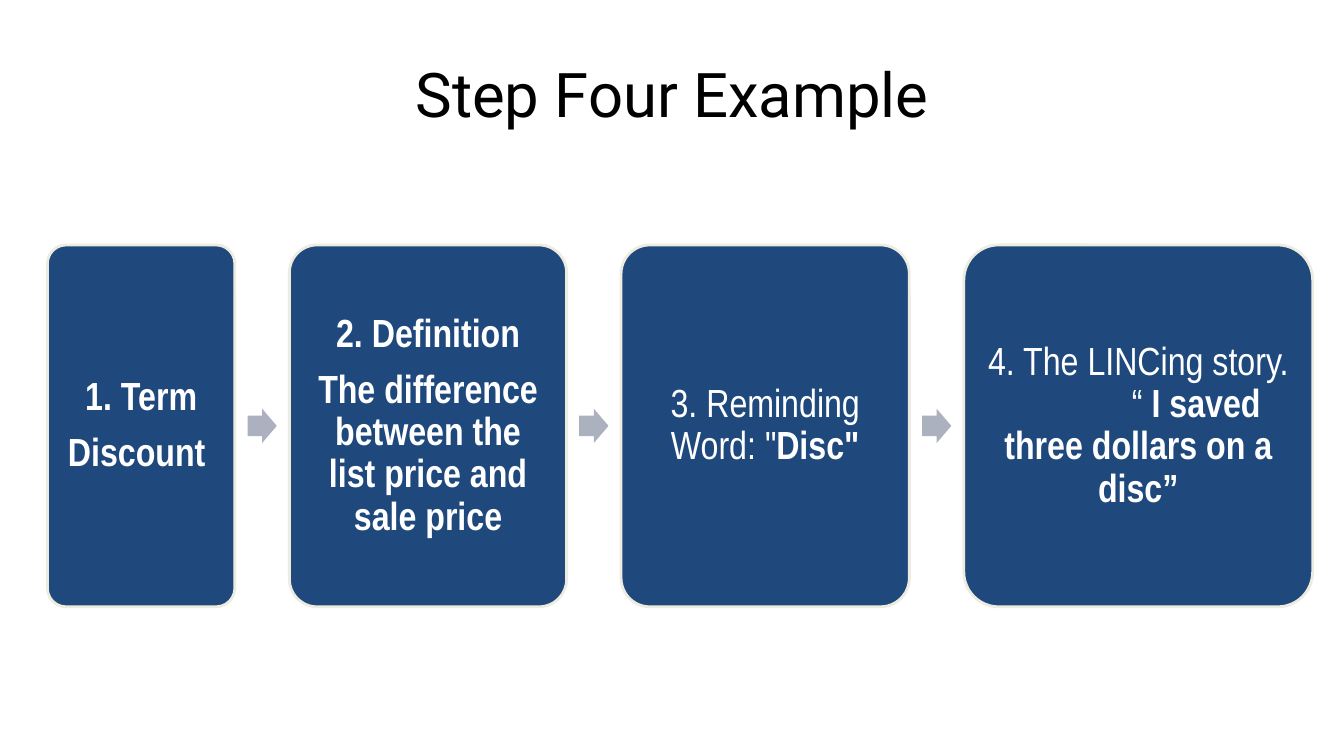
from pptx import Presentation
from pptx.dml.color import RGBColor
from pptx.enum.shapes import MSO_SHAPE
from pptx.enum.text import MSO_ANCHOR, PP_ALIGN
from pptx.util import Inches, Pt

# Content: each step has a box width and paragraphs of (text, bold) runs
TITLE = "Step Four Example"
STEPS = [
    (1.86, [[("1. Term", True)], [("Discount ", True)]]),
    (2.75, [[("2. Definition", True)],
            [("The difference between the list price and sale price", True)]]),
    (2.86, [[("3. Reminding Word: \"", False), ("Disc\"", True)]]),
    (3.46, [[("4. The LINCing story.", False)],
            [("“ ", False), ("I saved three dollars on a disc”", True)]]),
]
STORY_STEP = 3
STORY_INDENT = 1.15

# Style
BLACK = RGBColor(0x00, 0x00, 0x00)
WHITE = RGBColor(0xFF, 0xFF, 0xFF)
NAVY = RGBColor(0x1F, 0x49, 0x7D)
CREAM = RGBColor(0xEE, 0xEC, 0xE1)
GREY = RGBColor(0xAC, 0xB1, 0xBF)

# Layout in inches
FLOW_LEFT, FLOW_TOP, BOX_HEIGHT, GAP = 0.47, 2.43, 3.59, 0.54
ARROW_WIDTH, ARROW_HEIGHT = 0.29, 0.34
INSET = 0.12


def add_flat_shape(slide, kind, left, top, width, height, fill, adjustments):
    shape = slide.shapes.add_shape(
        kind, Inches(left), Inches(top), Inches(width), Inches(height))
    shape.shadow.inherit = False
    shape.fill.solid()
    shape.fill.fore_color.rgb = fill
    for index, value in enumerate(adjustments):
        shape.adjustments[index] = value
    return shape


def style_run(run, name, size, color, bold=False):
    run.font.name = name
    run.font.size = Pt(size)
    run.font.color.rgb = color
    run.font.bold = bold


def fill_step_text(text_frame, paragraphs):
    text_frame.word_wrap = True
    text_frame.vertical_anchor = MSO_ANCHOR.MIDDLE
    text_frame.margin_left = text_frame.margin_right = Inches(INSET)
    text_frame.margin_top = text_frame.margin_bottom = Inches(INSET)
    for index, runs in enumerate(paragraphs):
        paragraph = text_frame.add_paragraph() if index else text_frame.paragraphs[0]
        paragraph.alignment = PP_ALIGN.CENTER
        paragraph.line_spacing = 0.9
        paragraph.space_after = Pt(9.8)
        for text, bold in runs:
            run = paragraph.add_run()
            run.text = text
            style_run(run, "Arial Narrow", 28, WHITE, bold)


def main():
    presentation = Presentation()
    presentation.slide_width = Inches(13.33)
    presentation.slide_height = Inches(7.5)
    slide = presentation.slides.add_slide(presentation.slide_layouts[6])

    # Title
    title = slide.shapes.add_textbox(Inches(0.67), Inches(0.3), Inches(12), Inches(1.25))
    title.text_frame.word_wrap = True
    title.text_frame.vertical_anchor = MSO_ANCHOR.MIDDLE
    title.text_frame.text = TITLE
    heading = title.text_frame.paragraphs[0]
    heading.alignment = PP_ALIGN.CENTER
    style_run(heading.runs[0], "Roboto", 44, BLACK)

    # Step boxes with an arrow centred in each gap
    left = FLOW_LEFT
    for index, (width, paragraphs) in enumerate(STEPS):
        if index:
            arrow = add_flat_shape(
                slide, MSO_SHAPE.RIGHT_ARROW, left - (GAP + ARROW_WIDTH) / 2,
                FLOW_TOP + (BOX_HEIGHT - ARROW_HEIGHT) / 2,
                ARROW_WIDTH, ARROW_HEIGHT, GREY, [0.6, 0.5])
            arrow.line.fill.background()
        box = add_flat_shape(slide, MSO_SHAPE.ROUNDED_RECTANGLE, left, FLOW_TOP,
                             width, BOX_HEIGHT, NAVY, [0.1])
        box.line.color.rgb = CREAM
        box.line.width = Pt(2)
        fill_step_text(box.text_frame, paragraphs)
        if index == STORY_STEP:
            # The quotation follows closely, its first line pushed right
            label, story = box.text_frame.paragraphs
            label.space_after = Pt(0)
            properties = story._p.get_or_add_pPr()
            properties.set("marL", "0")
            properties.set("indent", str(Inches(STORY_INDENT)))
        left += width + GAP

    presentation.save("out.pptx")


if __name__ == "__main__":
    main()
